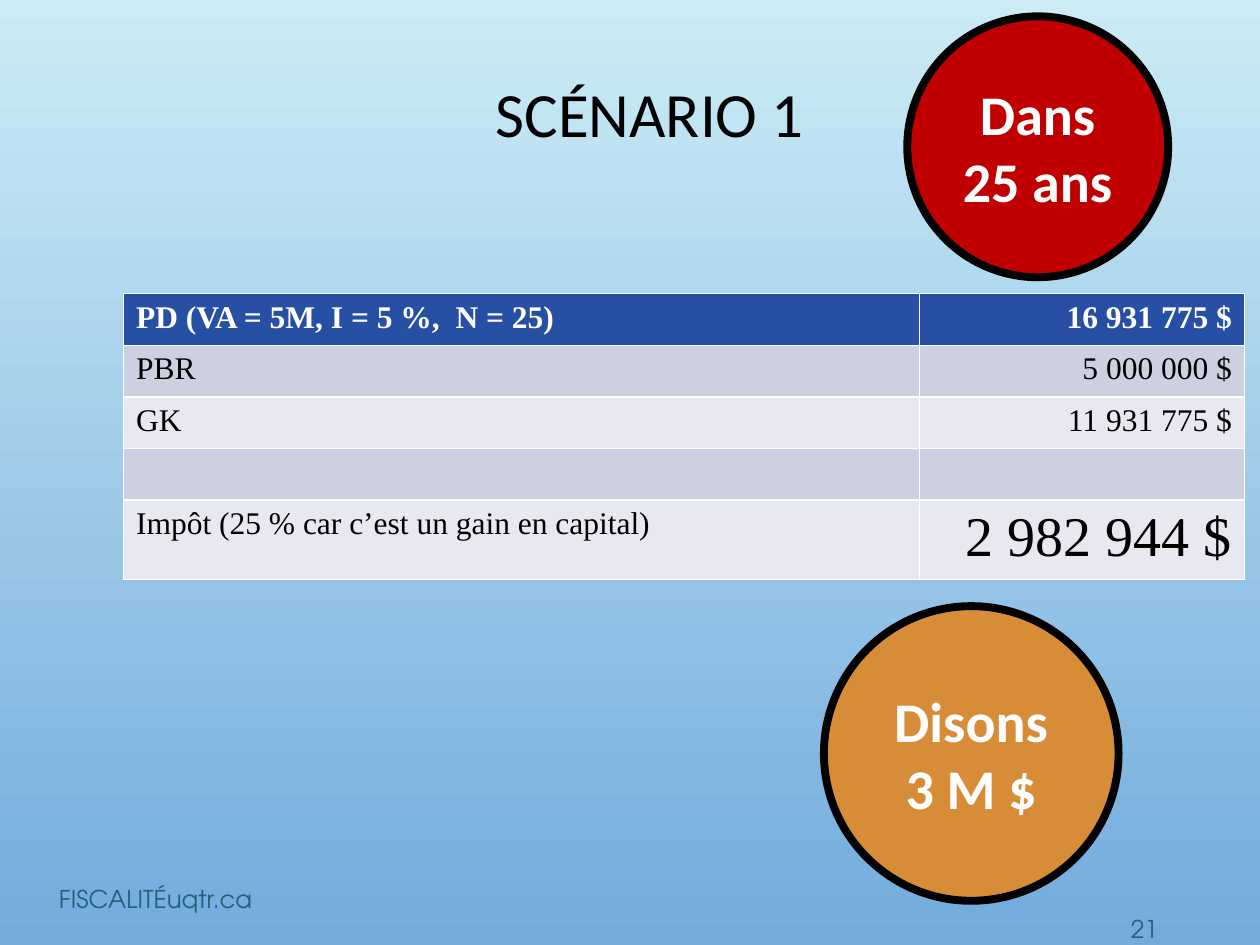
from dataclasses import dataclass

from pptx import Presentation
from pptx.dml.color import RGBColor
from pptx.enum import shapes, text
from pptx.util import Cm, Pt

BLACK = RGBColor(0x00, 0x00, 0x00)
WHITE = RGBColor(0xFF, 0xFF, 0xFF)
SKY = RGBColor(0xCB, 0xEC, 0xF5)
BLUE = RGBColor(0x73, 0xAB, 0xDD)
NAVY = RGBColor(0x27, 0x4F, 0xA4)
BANDS = (RGBColor(0xE8, 0xE9, 0xF0), RGBColor(0xCD, 0xD0, 0xE0))
TEAL = RGBColor(0x1C, 0x64, 0x7B)
AMBER = RGBColor(0xD7, 0x8D, 0x38)
RED = RGBColor(0xC0, 0x00, 0x00)

LEFT, MID, RIGHT = text.PP_ALIGN.LEFT, text.PP_ALIGN.CENTER, text.PP_ALIGN.RIGHT


@dataclass
class Disc:
    words: str
    left: float
    top: float
    size: float
    fill: RGBColor


@dataclass
class Note:
    words: str
    box: tuple[float, float, float, float]
    align: text.PP_ALIGN
    anchor: text.MSO_ANCHOR
    pads: tuple[float, float]


@dataclass
class Row:
    label: str
    value: str
    high: float = 1.04
    size: int = 18


DISCS = (
    Disc("Disons 3 M $", 16.61, 12.22, 5.94, AMBER),
    Disc("Dans 25 ans", 18.29, 0.33, 5.26, RED),
)
NOTES = (
    Note("FISCALITÉuqtr.ca", (0.94, 17.83, 15.06, 1.02), LEFT,
         text.MSO_ANCHOR.TOP, (0.25, 0)),
    Note("21", (22.56, 18.21, 1.02, 1.02), MID,
         text.MSO_ANCHOR.MIDDLE, (0.05, 0.13)),
)
ROWS = (
    Row("PD (VA = 5M, I = 5 %,  N = 25)", "16 931 775 $"),
    Row("PBR", "5 000 000 $"),
    Row("GK", "11 931 775 $"),
    Row("", ""),
    Row("Impôt (25 % car c’est un gain en capital)", "2 982 944 $", 1.6, 32),
)


def write(frame, words: str, *, font="Calibri", size=18, color=BLACK,
          bold=False, align=LEFT, space=None) -> None:
    para = frame.paragraphs[0]
    para.alignment = align
    para.line_spacing = space
    para.font.size = Pt(size)
    if words:
        run = para.add_run()
        run.text = words
        run.font.name = font
        run.font.size = Pt(size)
        run.font.bold = bold
        run.font.color.rgb = color


def paint(slide) -> None:
    fill = slide.background.fill
    fill.gradient()
    fill.gradient_angle = 270
    for stop, color, place in zip(fill.gradient_stops, (SKY, BLUE), (0, 1)):
        stop.color.rgb = color
        stop.position = place


def head(slide, words: str) -> None:
    title = slide.shapes.title
    title.left, title.top = Cm(2.29), Cm(0.71)
    title.width, title.height = Cm(21.62), Cm(3.3)
    title.text_frame.vertical_anchor = text.MSO_ANCHOR.MIDDLE
    write(title.text_frame, words, size=36, align=MID, space=0.9)


def grid(slide, rows: tuple[Row, ...], wide: tuple[float, ...]) -> None:
    high = sum(row.high for row in rows)
    table = slide.shapes.add_table(
        len(rows), len(wide), Cm(2.49), Cm(5.92), Cm(sum(wide)), Cm(high)).table
    for col, width in zip(table.columns, wide):
        col.width = Cm(width)
    for i, row in enumerate(rows):
        table.rows[i].height = Cm(row.high)
        top = i == 0
        parts = ((row.label, 18, LEFT), (row.value, row.size, RIGHT))
        for cell, (words, size, align) in zip(table.rows[i].cells, parts):
            cell.fill.solid()
            cell.fill.fore_color.rgb = NAVY if top else BANDS[i % 2]
            write(cell.text_frame, words, font="Times New Roman", size=size,
                  color=WHITE if top else BLACK, bold=top, align=align)


def label(slide, note: Note) -> None:
    frame = slide.shapes.add_textbox(*map(Cm, note.box)).text_frame
    frame.word_wrap = True
    frame.vertical_anchor = note.anchor
    side, edge = map(Cm, note.pads)
    frame.margin_left = frame.margin_right = side
    frame.margin_top = frame.margin_bottom = edge
    write(frame, note.words, font="TeX Gyre Adventor", size=14,
          color=TEAL, align=note.align)


def badge(slide, disc: Disc) -> None:
    shape = slide.shapes.add_shape(
        shapes.MSO_SHAPE.OVAL, Cm(disc.left), Cm(disc.top),
        Cm(disc.size), Cm(disc.size))
    shape.shadow.inherit = False
    shape.fill.solid()
    shape.fill.fore_color.rgb = disc.fill
    shape.line.color.rgb = BLACK
    shape.line.width = Pt(4.5)
    shape.text_frame.word_wrap = True
    shape.text_frame.vertical_anchor = text.MSO_ANCHOR.MIDDLE
    write(shape.text_frame, disc.words, size=32, color=WHITE,
          bold=True, align=MID)


def main() -> None:
    deck = Presentation()
    deck.slide_width, deck.slide_height = Cm(25.4), Cm(19.05)
    slide = deck.slides.add_slide(deck.slide_layouts[5])
    paint(slide)
    head(slide, "SCÉNARIO 1")
    grid(slide, ROWS, (16.05, 6.55))
    for note in NOTES:
        label(slide, note)
    for disc in DISCS:
        badge(slide, disc)
    deck.save("out.pptx")


if __name__ == "__main__":
    main()
